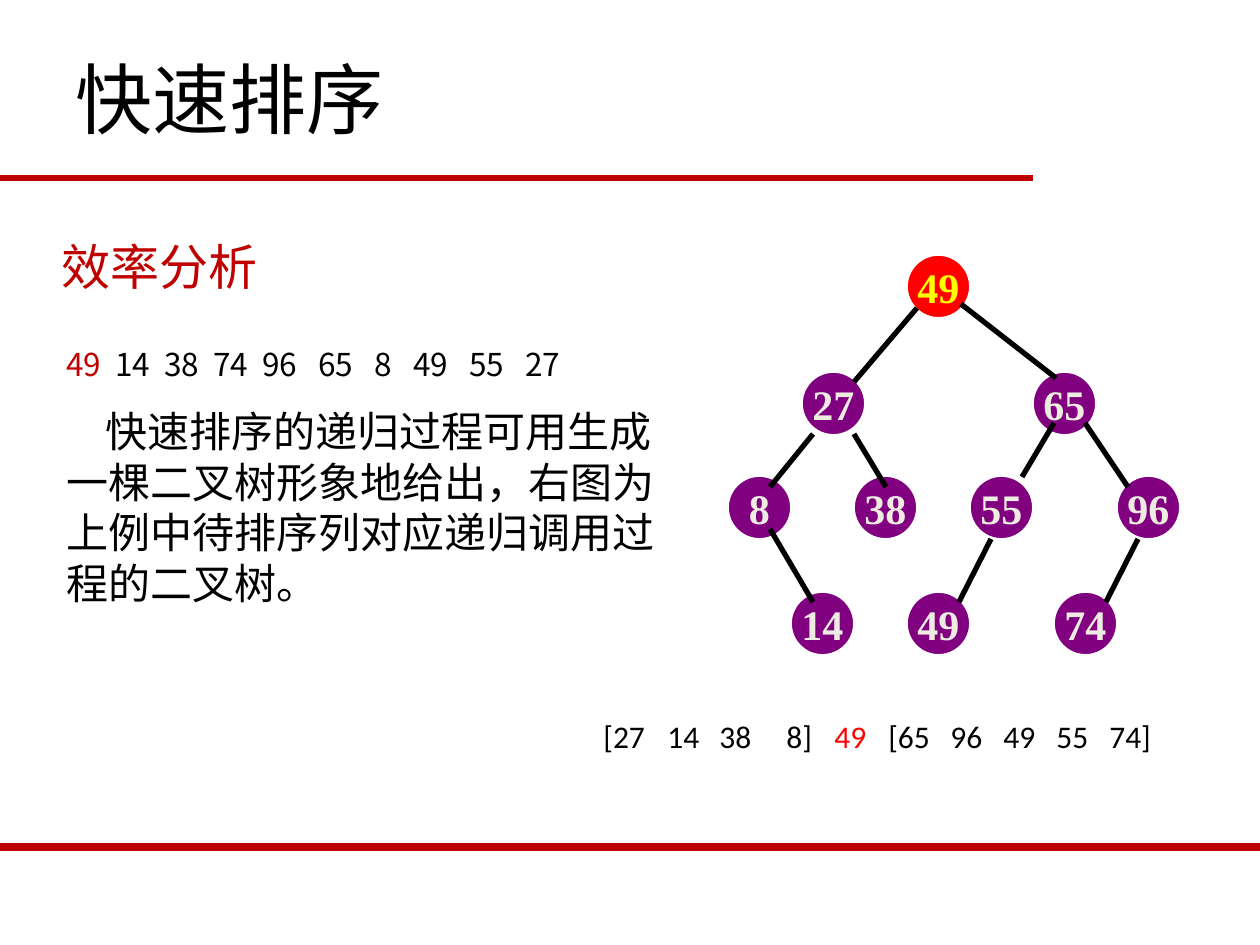
"""Build the quicksort efficiency slide with its recursion tree."""
import lxml.etree
import pptx
import pptx.dml.color
import pptx.enum.shapes
import pptx.enum.text
import pptx.oxml.ns
import pptx.util

COLORS = {
    "black": "000000", "white": "FFFFFF", "crimson": "C00000", "red": "FF0000",
    "purple": "800080", "yellow": "FFFF00", "cream": "EEECE1",
}
CJK = "Noto Sans CJK SC"
NODE_SIZE = 63
ROWS = [255, 372, 476, 592]
NODES = [
    ("49", 907, 0), ("27", 802, 1), ("65", 1033, 1),
    ("8", 728, 2), ("38", 854, 2), ("55", 970, 2), ("96", 1117, 2),
    ("14", 791, 3), ("49", 907, 3), ("74", 1054, 3),
]
EDGES = [
    (917, 308, 854, 382), (961, 304, 1056, 378),
    (813, 434, 770, 487), (854, 434, 886, 487),
    (1054, 423, 1022, 477), (1085, 423, 1128, 487),
    (770, 529, 813, 602), (991, 539, 959, 602), (1138, 539, 1106, 602),
]
INPUT_TABS = [49, 98, 147, 196, 252, 308, 347, 403, 459]
RESULT_TABS = [64, 116, 183, 231, 285, 347, 400, 453, 506]


def px(length):
    """Turn whole pixels into EMU."""
    return pptx.util.Emu(round(length * 914400 / 126))


def rgb(name):
    """Look up a named colour."""
    return pptx.dml.color.RGBColor.from_string(COLORS[name])


def add_xml(parent, tag, **attributes):
    """Append a DrawingML child element."""
    return lxml.etree.SubElement(parent, pptx.oxml.ns.qn(tag), attributes)


class Painter:
    """Hold the style and the current page."""

    def __init__(self, page):
        self.page = page
        self.edge_width = 3
        self.node_font = {"name": "Times New Roman", "size": pptx.util.Pt(24), "bold": True}

    def line(self, x1, y1, x2, y2, color="black", width=None):
        """Draw a straight line."""
        line = self.page.shapes.add_connector(
            pptx.enum.shapes.MSO_CONNECTOR.STRAIGHT, px(x1), px(y1), px(x2), px(y2))
        line.line.color.rgb = rgb(color)
        line.line.width = pptx.util.Pt(width or self.edge_width)
        add_xml(line._element.spPr, "a:effectLst")

    def span(self, para, text, color, font):
        """Add one styled run."""
        span = para.add_run()
        span.text = text
        for key, value in font.items():
            setattr(span.font, key, value)
        span.font.color.rgb = rgb(color)
        add_xml(span._r.get_or_add_rPr(), "a:ea", typeface=font["name"])

    def node(self, label, left, top, fill, color):
        """Draw one tree node."""
        node = self.page.shapes.add_shape(
            pptx.enum.shapes.MSO_SHAPE.OVAL, px(left), px(top), px(NODE_SIZE), px(NODE_SIZE))
        node.shadow.inherit = False
        node.fill.solid()
        node.fill.fore_color.rgb = rgb(fill)
        node.line.color.rgb = rgb("white")
        node.line.width = pptx.util.Pt(1)
        frame = node.text_frame
        frame.word_wrap = False
        frame.vertical_anchor = pptx.enum.text.MSO_ANCHOR.MIDDLE
        para = frame.paragraphs[0]
        para.alignment = pptx.enum.text.PP_ALIGN.CENTER
        self.span(para, label, color, self.node_font)

    def box(self, left, top, width, height):
        """Add a wrapping text box and return its frame."""
        box = self.page.shapes.add_textbox(px(left), px(top), px(width), px(height))
        box.text_frame.word_wrap = True
        return box.text_frame

    def para(self, para, spans, size, font=CJK, indent=0, tabs=(), **spacing):
        """Fill a paragraph with coloured spans."""
        for key, value in spacing.items():
            setattr(para, key, value)
        properties = para._p.get_or_add_pPr()
        if indent:
            properties.set("indent", str(px(indent)))
        if tabs:
            stops = add_xml(properties, "a:tabLst")
            for stop in tabs:
                add_xml(stops, "a:tab", pos=str(px(stop)), algn="l")
        for text, color in spans:
            if tabs:
                text = text.replace(" ", "\t")
            self.span(para, text, color, {"name": font, "size": pptx.util.Pt(size)})


def main():
    """Build and save the deck."""
    deck = pptx.Presentation()
    deck.slide_width, deck.slide_height = px(1260), px(945)
    painter = Painter(deck.slides.add_slide(deck.slide_layouts[6]))
    points = pptx.util.Pt

    painter.line(0, 178, 1033, 178, "crimson", 3)
    painter.line(0, 847, 1260, 847, "crimson", 4.5)

    body = painter.box(54, 336, 626, 280)
    painter.para(body.paragraphs[0],
                 [("49", "crimson"), (" 14 38 74 96 65 8 49 55 27", "black")],
                 18, tabs=INPUT_TABS, line_spacing=points(23.4))
    painter.para(body.add_paragraph(),
                 [("快速排序的递归过程可用生成一棵二叉树形象地给出，"
                   "右图为上例中待排序列对应递归调用过程的二叉树。", "black")],
                 24, indent=39, line_spacing=points(28.8), space_before=points(13))

    for index, (label, left, row) in enumerate(NODES):
        fill, color = ("purple", "cream") if index else ("red", "yellow")
        painter.node(label, left, ROWS[row], fill, color)
    for edge in EDGES:
        painter.line(*edge)

    heading = painter.box(49, 227, 491, 72)
    painter.para(heading.paragraphs[0], [("效率分析", "crimson")], 28, line_spacing=points(35.5))
    title = painter.box(63, 38, 1134, 158)
    painter.para(title.paragraphs[0], [("快速排序", "black")], 44, line_spacing=points(57))
    result = painter.box(591, 718, 582, 43)
    painter.para(result.paragraphs[0],
                 [("[27 14 38 8] ", "black"), ("49", "red"), (" [65 96 49 55 74]", "black")],
                 18, "Calibri", tabs=RESULT_TABS, line_spacing=0.8)
    deck.save("out.pptx")


if __name__ == "__main__":
    main()
